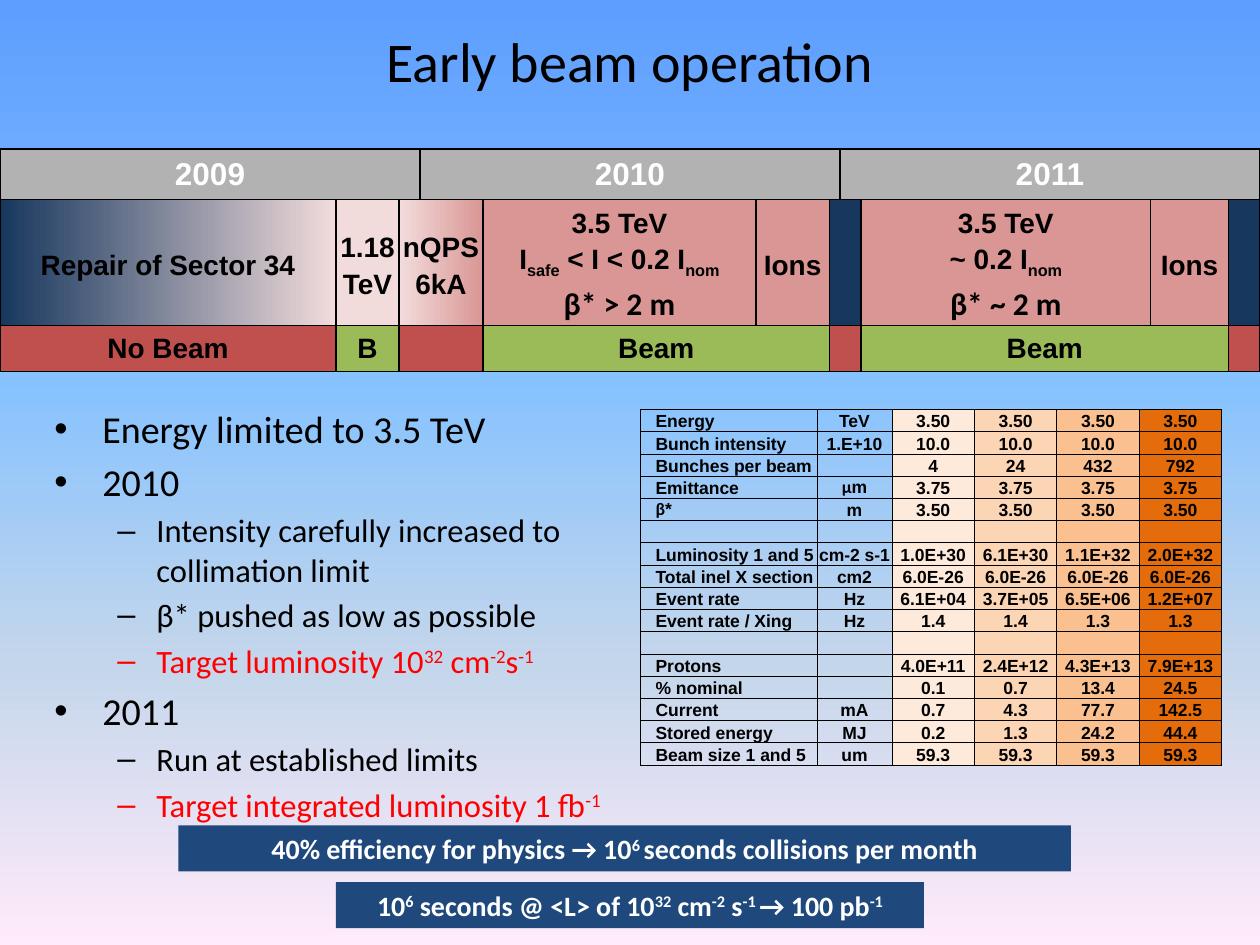
"""Build the slide on early beam operation with its timeline, parameter table and goals."""
from copy import deepcopy
from lxml import etree
from pptx import Presentation, util as u
from pptx.dml.color import RGBColor
from pptx.enum import shapes, text
from pptx.oxml import ns

deck = Presentation()
deck.slide_width, deck.slide_height = u.Inches(10), u.Inches(7.5)
page = deck.slides.add_slide(deck.slide_layouts[6])
COL, ROW = deck.slide_width / 120, deck.slide_height / 90
CENTER, LEFT = text.PP_ALIGN.CENTER, text.PP_ALIGN.LEFT
MIDDLE, BOTTOM = text.MSO_ANCHOR.MIDDLE, text.MSO_ANCHOR.BOTTOM
BASELINES = {"^": "30000", "_": "-25000"}


def paint(fill, colours, angle=0):
    """Fill with one hex colour, or with a gradient of several."""
    if len(colours) == 1:
        fill.solid()
        fill.fore_color.rgb = RGBColor.from_string(colours[0])
        return
    fill.gradient()
    fill.gradient_angle = angle
    stops = page.background.fill.gradient_stops if angle else fill.gradient_stops
    for stop, colour in zip(stops, colours):
        stop.color.rgb = RGBColor.from_string(colour)


def write(frame, words, size, name="Calibri", colour="000000", bold=False,
          align=CENTER, gap=0, symbol=None):
    """Write lines; pieces between bars may start with ^ (raised), _ (lowered) or $ (symbol)."""
    frame.text = words
    for para in frame.paragraphs:
        pieces = para.text.split("|")
        para.clear()
        para.alignment, para.space_before = align, u.Pt(size * gap)
        if not words:
            etree.SubElement(para._p, ns.qn("a:endParaRPr"), sz=str(size * 100))
        for piece in filter(None, pieces):
            span, mark = para.add_run(), piece[0]
            span.text = piece[1:] if mark in "^_$" else piece
            form = {"size": u.Pt(size), "name": name, "bold": bold}
            if mark == "$":
                form.update(size=u.Pt(symbol or size), name="Calibri")
            for key, value in form.items():
                setattr(span.font, key, value)
            paint(span.font.fill, [colour])
            if mark in BASELINES:
                span._r.get_or_add_rPr().set("baseline", BASELINES[mark])


page.background.fill.gradient()
stop_list = page.background.fill.gradient_stops
stop_parent = next(page._element.iter(ns.qn("a:gsLst")))
for _ in range(2):
    stop_parent.append(deepcopy(stop_parent[0]))
page.background.fill.gradient_angle = 270
for stop, place, colour in zip(page.background.fill.gradient_stops, (0, 0.4, 0.7, 1),
                               ("5E9EFF", "85C2FF", "C4D6EB", "FFEBFA")):
    stop.position, stop.color.rgb = place, RGBColor.from_string(colour)

title = page.shapes.add_textbox(*map(int, (6 * COL, 2 * ROW, 108 * COL, 7.5 * ROW))).text_frame
title.word_wrap, title.vertical_anchor = True, MIDDLE
write(title, "Early beam operation", 32)

NAVY, PALE, ROSE, RED, GREEN = ["17375E"], ["F2DCDB"], ["D99694"], ["C0504D"], ["9BBB59"]
phases = [("Repair of Sector 34", NAVY + PALE), ("1.18\nTeV", PALE), ("nQPS\n6kA", PALE + ROSE),
          ("3.5 TeV\nI|_safe| < I < 0.2 I|_nom\n$β* > 2 m", ROSE), ("Ions", ROSE), ("", NAVY),
          ("3.5 TeV\n~ 0.2 I|_nom\n$β* ~ 2 m", ROSE), ("Ions", ROSE), ("", NAVY)]
beams = [("No Beam", RED), ("B", GREEN), ("", RED), ("Beam", GREEN), ("", RED),
         ("Beam", GREEN), ("", RED)]
years = [(year, ["B2B2B2"]) for year in ("2009", "2010", "2011")]
SHADES = [None, None, ["FDEADA"], ["FCD5B5"], ["FAC090"], ["E46C0A"]]
parameters = """Energy;TeV;3.50;3.50;3.50;3.50
Bunch intensity;1.E+10;10.0;10.0;10.0;10.0
Bunches per beam;;4;24;432;792
Emittance;$µ|m;3.75;3.75;3.75;3.75
$β|*;m;3.50;3.50;3.50;3.50
;;;;;
Luminosity 1 and 5;cm-2 s-1;1.0E+30;6.1E+30;1.1E+32;2.0E+32
Total inel X section;cm2;6.0E-26;6.0E-26;6.0E-26;6.0E-26
Event rate;Hz;6.1E+04;3.7E+05;6.5E+06;1.2E+07
Event rate / Xing;Hz;1.4;1.4;1.3;1.3
;;;;;
Protons;;4.0E+11;2.4E+12;4.3E+13;7.9E+13
% nominal;;0.1;0.7;13.4;24.5
Current;mA;0.7;4.3;77.7;142.5
Stored energy;MJ;0.2;1.3;24.2;44.4
Beam size 1 and 5;um;59.3;59.3;59.3;59.3"""
values = [list(zip(line.split(";"), SHADES)) for line in parameters.splitlines()]

strip = {"size": 16, "gap": 0.2, "symbol": 18}
tables = [
    (0, 19, [32, 6, 8, 26, 7, 3, 27.6, 7.4, 3], 12, [phases], 1, 0.05, MIDDLE, strip),
    (0, 14.2, [40] * 3, 4.6, [years], 1, 0.05, MIDDLE,
     {"size": 18, "gap": 0.2, "colour": "FFFFFF"}),
    (0, 31, [32, 6, 8, 33, 3, 35, 3], 4.2, [beams], 1, 0.05, MIDDLE, strip),
    (61, 39, [16.8, 7.15] + [7.85] * 4, 2.12, values, 0.5, 0, BOTTOM, {"size": 10}),
]
for left, top, widths, height, rows, line, margin, anchor, form in tables:
    table = page.shapes.add_table(len(rows), len(widths), *map(int, (
        left * COL, top * ROW, sum(widths) * COL, len(rows) * height * ROW))).table
    table.first_row = table.horz_banding = False
    for column, width in zip(table.columns, widths):
        column.width = int(width * COL)
    for row, entries in zip(table.rows, rows):
        row.height = int(height * ROW)
        for number, (cell, (words, fill)) in enumerate(zip(row.cells, entries)):
            label = rows is values and number == 0
            layout = {"margin_left": u.Inches(0.12 if label else 0), "margin_right": 0,
                      "margin_top": u.Inches(margin), "margin_bottom": u.Inches(margin),
                      "vertical_anchor": anchor}
            for key, value in layout.items():
                setattr(cell, key, value)
            write(cell.text_frame, words, name="Arial", bold=True,
                  align=LEFT if label else CENTER, **form)
            if fill:
                paint(cell.fill, fill)
            else:
                cell.fill.background()
            for place, side in enumerate("LRTB"):
                edge = etree.Element(ns.qn("a:ln" + side), w=str(u.Pt(line)))
                solid = etree.SubElement(edge, ns.qn("a:solidFill"))
                etree.SubElement(solid, ns.qn("a:srgbClr"), val="000000")
                cell._tc.get_or_add_tcPr().insert(place, edge)

goals = [(0, "Energy limited to 3.5 TeV"), (0, "2010"),
         (1, "Intensity carefully increased to collimation limit"),
         (1, "β* pushed as low as possible"),
         (1, "Target luminosity 10|^32| cm|^-2|s|^-1"), (0, "2011"),
         (1, "Run at established limits"), (1, "Target integrated luminosity 1 fb|^-1")]
LEVELS = [(21.7, "•", 0.38, -0.38), (18.6, "–", 0.81, -0.31)]
body = page.shapes.add_textbox(*map(int, (4 * COL, 38 * ROW, 57 * COL, 39 * ROW))).text_frame
body.word_wrap = True
write(body, "\n".join(words for _, words in goals), 18.6, align=LEFT, gap=0.2)
for para, (level, words) in zip(body.paragraphs, goals):
    size, bullet, margin, indent = LEVELS[level]
    para.level, para.space_before = level, u.Pt(size * 0.2)
    props = para._p.get_or_add_pPr()
    props.set("marL", str(u.Inches(margin)))
    props.set("indent", str(u.Inches(indent)))
    etree.SubElement(props, ns.qn("a:buFont"), typeface="Arial")
    etree.SubElement(props, ns.qn("a:buChar"), char=bullet)
    for span in para.runs:
        span.font.size = u.Pt(size)
        paint(span.font.fill, ["FF0000" if words.startswith("Target") else "000000"])

banners = [(17, 78.6, 85, "40% efficiency for physics → 10|^6 |seconds collisions per month"),
           (32, 84, 56, "10|^6| seconds @ <L> of 10|^32| cm|^-2| s|^-1 |→ 100 pb|^-1")]
for left, top, width, words in banners:
    box = page.shapes.add_shape(shapes.MSO_SHAPE.RECTANGLE, *map(int, (
        left * COL, top * ROW, width * COL, 4.4 * ROW)))
    box.shadow.inherit = False
    box.line.fill.background()
    paint(box.fill, ["1F497D"])
    write(box.text_frame, words, 16, colour="FFFFFF", bold=True)

deck.save("out.pptx")
